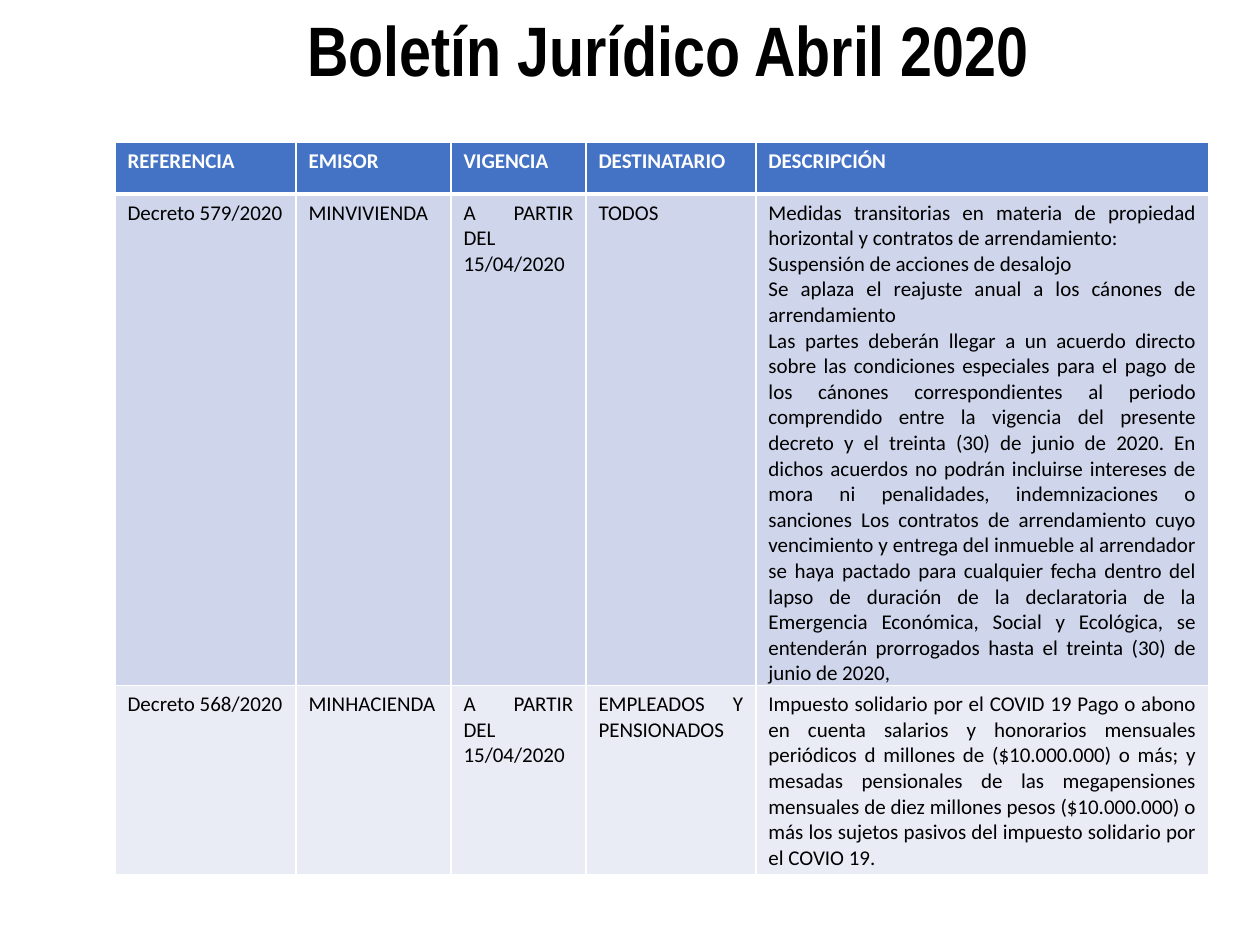
from dataclasses import dataclass

from lxml.etree import SubElement
from pptx import Presentation
from pptx.dml.color import RGBColor
from pptx.enum.text import MSO_ANCHOR, MSO_AUTO_SIZE, PP_ALIGN
from pptx.oxml.ns import qn
from pptx.util import Emu, Pt

PX = 914400 // 126


@dataclass(frozen=True)
class Theme:
    """Colours, fonts and type sizes of the bulletin."""
    white: str = "FFFFFF"
    black: str = "000000"
    header: str = "4472C4"
    bands: tuple = ("CFD5EA", "E9EBF5")
    title_font: str = "Arial Narrow"
    body_font: str = "Calibri"
    title_size: int = 40
    body_size: int = 12
    line: int = 1
    header_line: int = 3


THEME = Theme()
TITLE = "Boletín Jurídico Abril 2020"
TITLE_BOX = (295, 0, 753, 97)
TABLE_BOX = (115, 142, 1094, 732)
COLUMN_WIDTHS = (181, 155, 135, 170, 453)
ROW_HEIGHT = 52
VALIDITY = "A PARTIR DEL 15/04/2020"
ROWS = [
    ("REFERENCIA", "EMISOR", "VIGENCIA", "DESTINATARIO", "DESCRIPCIÓN"),
    ("Decreto 579/2020", "MINVIVIENDA", VALIDITY, "TODOS",
     "Medidas transitorias en materia de propiedad horizontal y contratos de "
     "arrendamiento:\n"
     "Suspensión de acciones de desalojo\n"
     "Se aplaza el reajuste anual a los cánones de arrendamiento\n"
     "Las partes deberán llegar a un acuerdo directo sobre las condiciones "
     "especiales para el pago de los cánones correspondientes al periodo "
     "comprendido entre la vigencia del presente decreto y el treinta (30) de "
     "junio de 2020. En dichos acuerdos no podrán incluirse intereses de mora "
     "ni penalidades, indemnizaciones o sanciones Los contratos de "
     "arrendamiento cuyo vencimiento y entrega del inmueble al arrendador se "
     "haya pactado para cualquier fecha dentro del lapso de duración de la "
     "declaratoria de la Emergencia Económica, Social y Ecológica, se "
     "entenderán prorrogados hasta el treinta (30) de junio de 2020,"),
    ("Decreto 568/2020", "MINHACIENDA", VALIDITY, "EMPLEADOS Y PENSIONADOS",
     "Impuesto solidario por el COVID 19 Pago o abono en cuenta salarios y "
     "honorarios mensuales periódicos d millones de ($10.000.000) o más; y "
     "mesadas pensionales de las megapensiones mensuales de diez millones "
     "pesos ($10.000.000) o más los sujetos pasivos del impuesto solidario por "
     "el COVIO 19."),
]


def px(n):
    """Turn whole pixels into EMU."""
    return Emu(n * PX)


def format_text(tf, align, color, **font):
    """Give every paragraph the same alignment, colour and font values."""
    for p in tf.paragraphs:
        p.alignment = align
        p.font.color.rgb = RGBColor.from_string(color)
        for name, value in font.items():
            setattr(p.font, name, value)


def add_borders(cell, widths):
    """Draw white borders of the given point widths by side."""
    tc_pr = cell._tc.get_or_add_tcPr()
    for side, width in widths.items():
        ln = SubElement(tc_pr, qn(f"a:ln{side}"), w=str(Pt(width)))
        fill = SubElement(ln, qn("a:solidFill"))
        SubElement(fill, qn("a:srgbClr"), val=THEME.white)


def fill_title(s, box):
    """Place the bulletin heading in the title placeholder."""
    sp = s.shapes.title
    sp.left, sp.top, sp.width, sp.height = map(px, box)
    tf = sp.text_frame
    tf.text = TITLE
    values = {"word_wrap": False, "auto_size": MSO_AUTO_SIZE.SHAPE_TO_FIT_TEXT,
              "vertical_anchor": MSO_ANCHOR.TOP}
    for name, value in values.items():
        setattr(tf, name, value)
    format_text(tf, PP_ALIGN.LEFT, THEME.black, name=THEME.title_font,
                size=Pt(THEME.title_size), bold=True)


def add_decree_table(s, box):
    """Add the table of decrees with a header and banded rows."""
    frame = s.shapes.add_table(len(ROWS), len(COLUMN_WIDTHS), *map(px, box))
    table = frame.table
    for column, width in zip(table.columns, COLUMN_WIDTHS):
        column.width = px(width)
    for i, (row, texts) in enumerate(zip(table.rows, ROWS)):
        row.height = px(ROW_HEIGHT)
        header = i == 0
        fill = THEME.header if header else THEME.bands[(i - 1) % 2]
        borders = {"L": THEME.line, "R": THEME.line}
        if header:
            borders["T"] = THEME.line
        borders["B"] = THEME.header_line if header else THEME.line
        for cell, text in zip(row.cells, texts):
            cell.text = text
            add_borders(cell, borders)
            cell.fill.solid()
            cell.fill.fore_color.rgb = RGBColor.from_string(fill)
            format_text(cell.text_frame, PP_ALIGN.JUSTIFY,
                        THEME.white if header else THEME.black,
                        name=THEME.body_font, size=Pt(THEME.body_size), bold=header)
    frame.height = px(box[3])


def main():
    """Build and save the bulletin slide."""
    prs = Presentation()
    prs.slide_width, prs.slide_height = px(1260), px(945)
    s = prs.slides.add_slide(prs.slide_layouts.get_by_name("Title Only"))
    fill_title(s, TITLE_BOX)
    add_decree_table(s, TABLE_BOX)
    prs.save("out.pptx")


if __name__ == "__main__":
    main()
